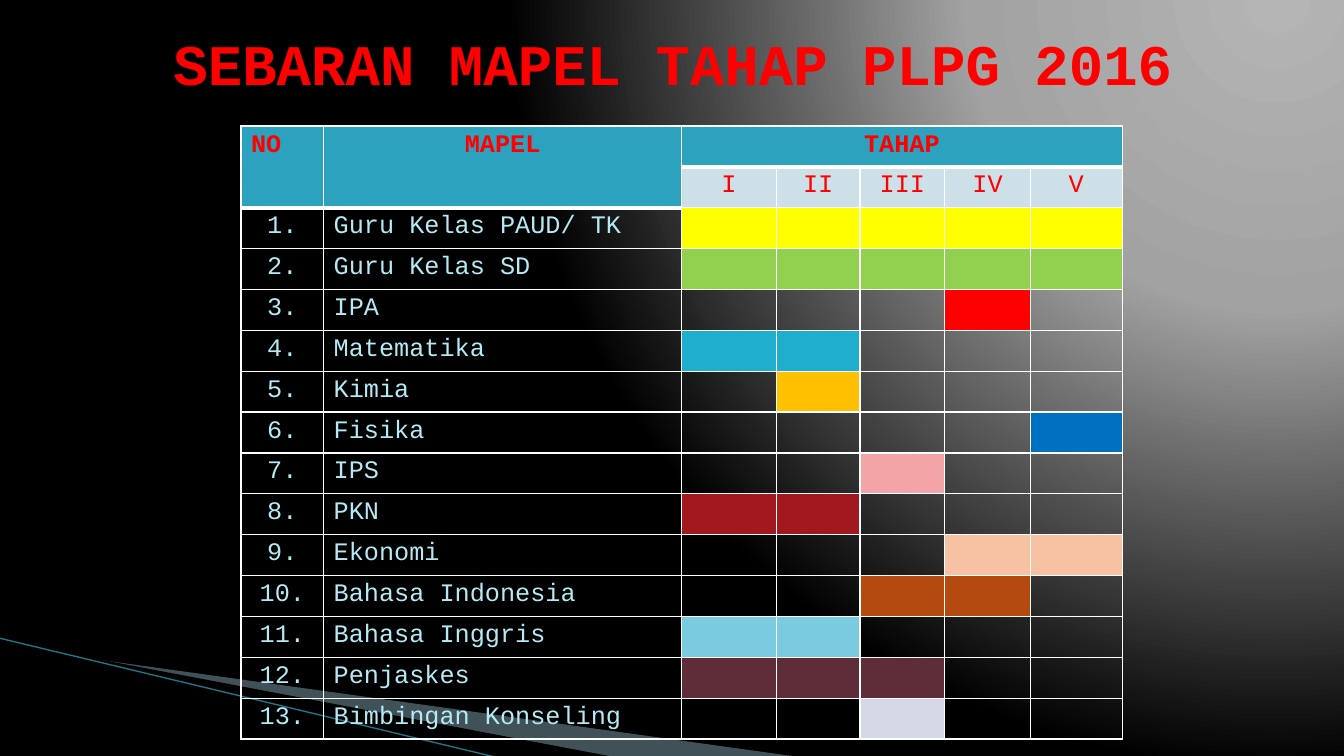
from pptx import Presentation
from pptx import util as u
from pptx.dml.color import RGBColor
from pptx.enum import shapes, text
from pptx.oxml import parse_xml
from pptx.oxml.ns import nsdecls
from lxml import etree

RED = RGBColor(0xFF, 0x00, 0x00)
WHITE = RGBColor(0xFF, 0xFF, 0xFF)
BLACK = RGBColor(0x00, 0x00, 0x00)
TEAL = RGBColor(0x2D, 0xA2, 0xBF)
PALE_TEAL = RGBColor(0xCD, 0xE0, 0xE8)
ICE = RGBColor(0xB5, 0xE9, 0xF4)
WEDGE = RGBColor(0xA0, 0xCB, 0xDC)
STRIPE = RGBColor(0x1D, 0x78, 0x8B)
YELLOW = RGBColor(0xFF, 0xFF, 0x00)
GREEN = RGBColor(0x92, 0xD0, 0x50)
CYAN = RGBColor(0x1F, 0xAE, 0xCD)
AMBER = RGBColor(0xFF, 0xC0, 0x00)
BLUE = RGBColor(0x00, 0x70, 0xC0)
PINK = RGBColor(0xF2, 0xA4, 0xA7)
CRIMSON = RGBColor(0xA3, 0x17, 0x1E)
PEACH = RGBColor(0xF7, 0xC1, 0xA4)
RUST = RGBColor(0xB5, 0x4A, 0x10)
SKY = RGBColor(0x7A, 0xCB, 0xE0)
PLUM = RGBColor(0x5E, 0x2D, 0x37)
LAVENDER = RGBColor(0xD7, 0xD8, 0xE7)

FONT = "Courier New"
TITLE = {"name": FONT, "size": u.Pt(41), "bold": True}
HEAD = {"name": FONT, "size": u.Pt(18), "bold": True}
BODY = {"name": FONT, "size": u.Pt(18), "bold": False}
LEFT, CENTER = text.PP_ALIGN.LEFT, text.PP_ALIGN.CENTER

GRADIENT = [(0, "B4B4B4"), (40, "A2A2A2"), (100, "000000")]
STAGES = ["I", "II", "III", "IV", "V"]
COLUMNS = [0.82, 3.55, 0.94, 0.83, 0.84, 0.85, 0.91]
SUBJECTS = [
    ("Guru Kelas PAUD/ TK", YELLOW, STAGES),
    ("Guru Kelas SD", GREEN, STAGES),
    ("IPA", RED, ["IV"]),
    ("Matematika", CYAN, ["I", "II"]),
    ("Kimia", AMBER, ["II"]),
    ("Fisika", BLUE, ["V"]),
    ("IPS", PINK, ["III"]),
    ("PKN", CRIMSON, ["I", "II"]),
    ("Ekonomi", PEACH, ["IV", "V"]),
    ("Bahasa Indonesia", RUST, ["III", "IV"]),
    ("Bahasa Inggris", SKY, ["I", "II"]),
    ("Penjaskes", PLUM, ["I", "II", "III"]),
    ("Bimbingan Konseling", LAVENDER, ["III"]),
]


def write(frame, words, style, color, align):
    para = frame.paragraphs[0]
    para.alignment = align
    span = para.add_run()
    span.text = words
    for name, value in style.items():
        setattr(span.font, name, value)
    span.font.color.rgb = color


def paint_background(page):
    stops = "".join(
        f'<a:gs pos="{place * 1000}"><a:srgbClr val="{color}"/></a:gs>'
        for place, color in GRADIENT)
    page.element.cSld.insert(0, parse_xml(
        f'<p:bg {nsdecls("p", "a")}><p:bgPr><a:gradFill rotWithShape="1">'
        f'<a:gsLst>{stops}</a:gsLst><a:path path="circle">'
        '<a:fillToRect l="95000" t="-106000" r="5000" b="206000"/></a:path>'
        '</a:gradFill><a:effectLst/></p:bgPr></p:bg>'))


def set_frame(wedge, frame):
    left, top, width, height = map(u.Inches, frame)
    outline = wedge.element.spPr.find(".//{*}pathLst/{*}path")
    for point in outline.iter("{*}pt"):
        point.set("x", str(int(point.get("x")) + wedge.left - left))
        point.set("y", str(int(point.get("y")) + wedge.top - top))
    outline.set("w", str(width))
    outline.set("h", str(height))
    wedge.left, wedge.top, wedge.width, wedge.height = left, top, width, height


def add_wedge(page, frame, points, color, opacity=100):
    corners = [(u.Inches(x), u.Inches(y)) for x, y in points]
    builder = page.shapes.build_freeform(*corners[0])
    builder.add_line_segments(corners[1:], close=True)
    wedge = builder.convert_to_shape()
    set_frame(wedge, frame)
    wedge.shadow.inherit = False
    wedge.line.fill.background()
    wedge.fill.solid()
    wedge.fill.fore_color.rgb = color
    if opacity < 100:
        tint = wedge.element.spPr.find(".//{*}solidFill/{*}srgbClr")
        etree.SubElement(tint, tint.tag.replace("srgbClr", "alpha"),
                         val=str(opacity * 1000))


def add_stripe(page, start, end):
    stripe = page.shapes.add_connector(
        shapes.MSO_CONNECTOR.STRAIGHT, *map(u.Inches, start + end))
    stripe.line.color.rgb = STRIPE
    stripe.line.width = u.Pt(0.95)
    stripe.element.spPr.append(parse_xml(f'<a:effectLst {nsdecls("a")}/>'))


def add_title(page, words):
    title = page.shapes.title
    title.left, title.top = u.Inches(0.68), u.Inches(0)
    title.width, title.height = u.Inches(12), u.Inches(1.25)
    title.text_frame.vertical_anchor = text.MSO_ANCHOR.MIDDLE
    write(title.text_frame, words, TITLE, RED, CENTER)


def edge_width(row, column):
    return 3 if row == (1 if column >= 2 else 2) else 1


def set_borders(cell, row, column):
    widths = {"L": 1, "R": 1, "T": edge_width(row, column),
              "B": edge_width(row + 1, column)}
    for side, width in widths.items():
        cell._tc.get_or_add_tcPr().append(parse_xml(
            f'<a:ln{side} {nsdecls("a")} w="{u.Pt(width)}"><a:solidFill>'
            f'<a:srgbClr val="{WHITE}"/></a:solidFill></a:ln{side}>'))


def fill_cell(cell, color):
    cell.fill.solid()
    cell.fill.fore_color.rgb = color


def add_grid(page):
    rows = len(SUBJECTS) + 2
    frame = page.shapes.add_table(
        rows, len(COLUMNS), u.Inches(2.39), u.Inches(1.25),
        u.Inches(8.74), u.Inches(6.08))
    grid = frame.table
    grid.first_row = grid.horz_banding = False
    for column, width in zip(grid.columns, COLUMNS):
        column.width = u.Inches(width)
    for r in range(rows):
        grid.rows[r].height = u.Inches(6.08 / rows)
        for c in range(len(COLUMNS)):
            set_borders(grid.cell(r, c), r, c)
            grid.cell(r, c).fill.background()
    return grid


def add_headings(grid):
    headings = [("NO", LEFT, 0, (1, 0)), ("MAPEL", CENTER, 1, (1, 1)),
                ("TAHAP", CENTER, 2, (0, 6))]
    for words, align, column, corner in headings:
        cell = grid.cell(0, column)
        cell.merge(grid.cell(*corner))
        fill_cell(cell, TEAL)
        write(cell.text_frame, words, HEAD, RED, align)
    for column, stage in enumerate(STAGES, 2):
        cell = grid.cell(1, column)
        fill_cell(cell, PALE_TEAL)
        write(cell.text_frame, stage, BODY, RED, CENTER)


def add_subjects(grid):
    for number, (subject, color, active) in enumerate(SUBJECTS, 1):
        row = number + 1
        write(grid.cell(row, 0).text_frame, f"{number}.", BODY, ICE, CENTER)
        write(grid.cell(row, 1).text_frame, subject, BODY, ICE, LEFT)
        for stage in active:
            fill_cell(grid.cell(row, STAGES.index(stage) + 2), color)


def main():
    deck = Presentation()
    deck.slide_width, deck.slide_height = u.Inches(13.33), u.Inches(7.5)
    page = deck.slides.add_slide(deck.slide_layouts[5])
    paint_background(page)
    add_wedge(page, (1.04, 5.47, 5.54, 1.58),
              [(0.73, 6.51), (7.93, 7.51), (6.08, 7.51), (0.73, 6.5)], WEDGE, 40)
    add_wedge(page, (-0.08, 6.33, 5.54, 0.92),
              [(0.71, 6.49), (6.09, 7.51), (4.96, 7.52), (0.72, 6.5)], BLACK)
    add_stripe(page, (-0.01, 6.33), (4.95, 7.52))
    add_title(page, "SEBARAN MAPEL TAHAP PLPG 2016")
    grid = add_grid(page)
    add_headings(grid)
    add_subjects(grid)
    deck.save("out.pptx")


if __name__ == "__main__":
    main()
